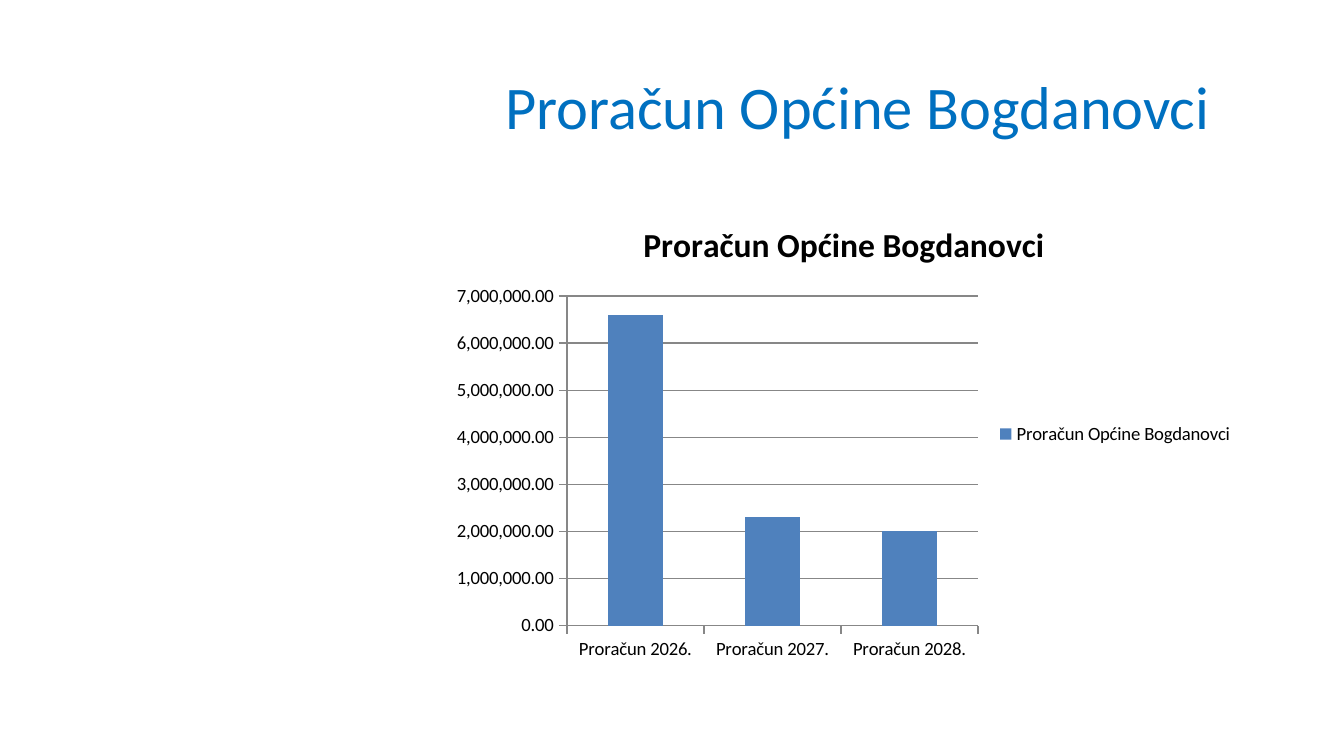
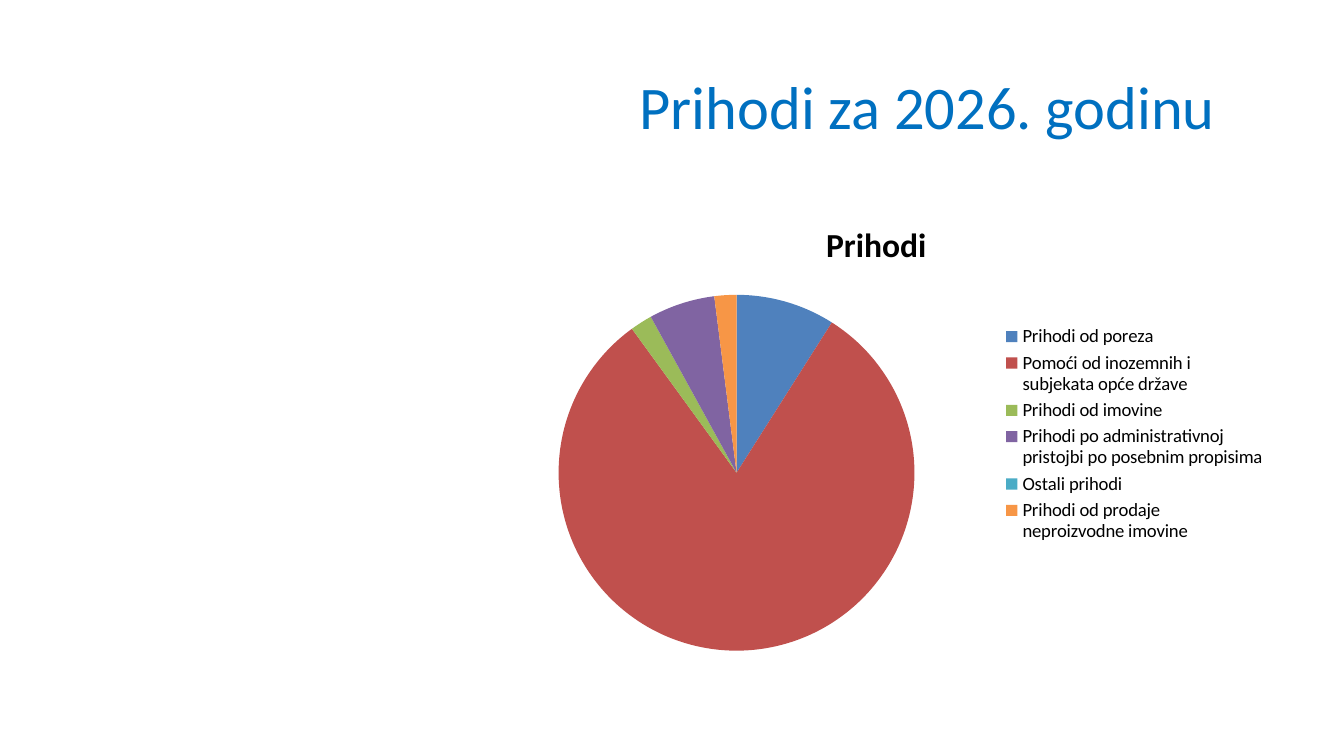
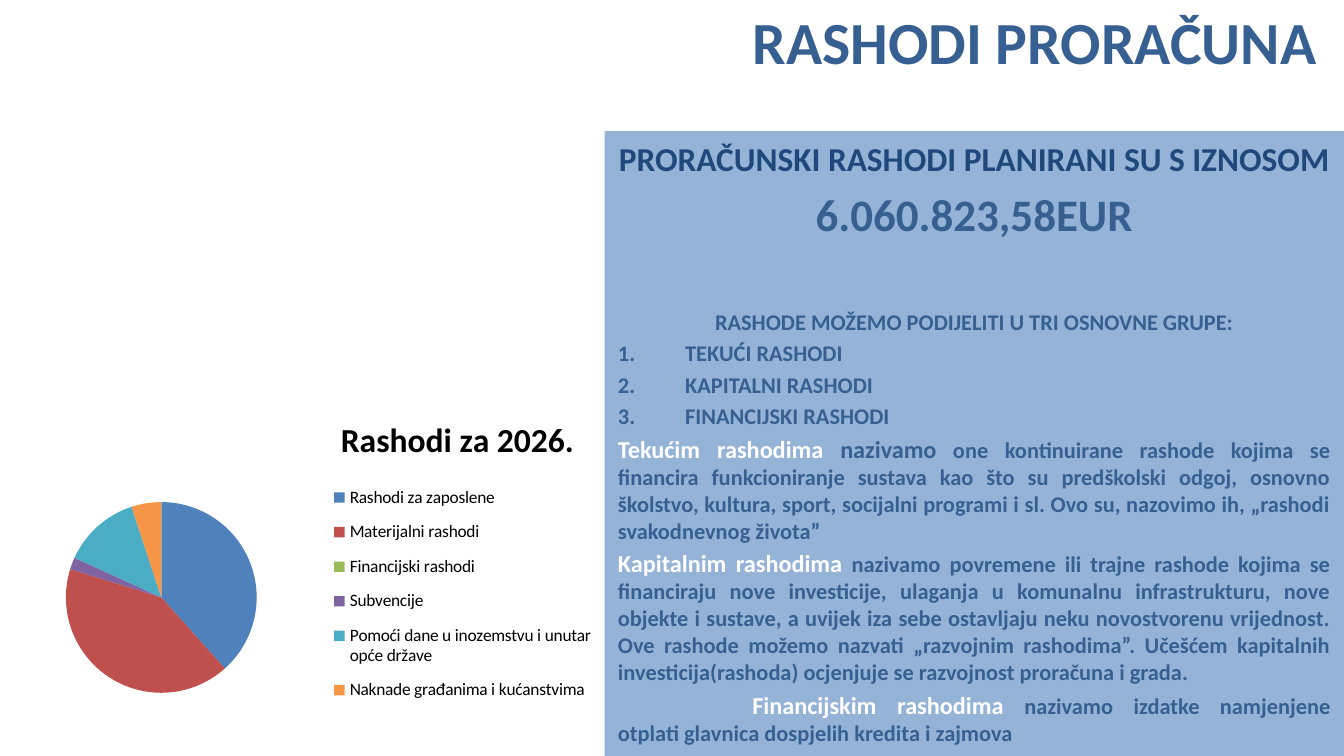
from typing import NamedTuple

from lxml import etree
from pptx import Presentation, util as u
from pptx.chart.data import CategoryChartData
from pptx.dml.color import RGBColor
from pptx.enum import chart as charts, shapes, text
from pptx.oxml.ns import qn

# Shared style
FONT = "Calibri"
BLACK = RGBColor(0x00, 0x00, 0x00)
WHITE = RGBColor(0xFF, 0xFF, 0xFF)
BRIGHT_BLUE = RGBColor(0x00, 0x70, 0xC0)
STEEL = RGBColor(0x37, 0x60, 0x92)
NAVY = RGBColor(0x1F, 0x49, 0x7D)
PANEL_BLUE = RGBColor(0x95, 0xB3, 0xD7)
AXIS_GRAY = RGBColor(0x87, 0x87, 0x87)
SERIES_COLORS = [
    RGBColor(0x4F, 0x81, 0xBD), RGBColor(0xC0, 0x50, 0x4D),
    RGBColor(0x9B, 0xBB, 0x59), RGBColor(0x80, 0x64, 0xA2),
    RGBColor(0x4B, 0xAC, 0xC6), RGBColor(0xF7, 0x96, 0x46),
]

# A 16:9 slide, as a grid of 100 columns and 56.25 rows
SLIDE_WIDTH = u.Inches(10)
SLIDE_HEIGHT = SLIDE_WIDTH * 9 // 16
COLUMN, ROW = SLIDE_WIDTH / 100, SLIDE_HEIGHT / 56.25


class Box(NamedTuple):
    left: float
    top: float
    width: float
    height: float

    def lengths(self):
        return (round(self.left * COLUMN), round(self.top * ROW),
                round(self.width * COLUMN), round(self.height * ROW))


TITLE_BOX = Box(26.6, 4.7, 68.5, 6.3)


def style_font(font, size, color, bold=False):
    font.name, font.size, font.bold = FONT, u.Pt(size), bold
    font.color.rgb = color


def indent(para, left=0, first=0):
    """Set the left and first-line indents, in columns."""
    properties = para._p.get_or_add_pPr()
    properties.set("marL", str(round(left * COLUMN)))
    properties.set("indent", str(round(first * COLUMN)))
    return properties


def add_title_slide(deck, title, box, size, color, bold=False,
                    align=text.PP_ALIGN.LEFT, left_indent=0, right_margin=1):
    page = deck.slides.add_slide(deck.slide_layouts[5])
    holder = page.shapes.title
    holder.left, holder.top, holder.width, holder.height = box.lengths()
    frame = holder.text_frame
    frame.text = title
    frame.word_wrap = True
    frame.auto_size = text.MSO_AUTO_SIZE.NONE
    frame.vertical_anchor = text.MSO_ANCHOR.MIDDLE
    frame.margin_right = round(right_margin * COLUMN)
    para = frame.paragraphs[0]
    para.alignment = align
    indent(para, left_indent)
    style_font(para.font, size, color, bold)
    return page


# Charts
def add_titled_chart(page, box, kind, title, values, number_format="General"):
    data = CategoryChartData(number_format=number_format)
    data.categories = list(values)
    data.add_series(title, list(values.values()))
    chart = page.shapes.add_chart(kind, *box.lengths(), data).chart
    style_font(chart.font, 10, BLACK)
    chart.has_title = True
    chart.chart_title.text_frame.text = title
    style_font(chart.chart_title.text_frame.paragraphs[0].runs[0].font,
               18, BLACK, True)
    chart.has_legend = True
    chart.legend.position = charts.XL_LEGEND_POSITION.RIGHT
    chart.legend.include_in_layout = False
    return chart


def add_column_chart(page, box, title, values):
    chart = add_titled_chart(page, box, charts.XL_CHART_TYPE.COLUMN_CLUSTERED,
                             title, values, "#,##0.00")
    plot = chart.plots[0]
    plot.vary_by_categories = False
    plot.gap_width = 150
    fill = plot.series[0].format.fill
    fill.solid()
    fill.fore_color.rgb = SERIES_COLORS[0]
    chart.value_axis.has_major_gridlines = True
    for axis in (chart.category_axis, chart.value_axis):
        axis.major_tick_mark = charts.XL_TICK_MARK.OUTSIDE
    for ruled in (chart.category_axis, chart.value_axis,
                  chart.value_axis.major_gridlines):
        ruled.format.line.color.rgb = AXIS_GRAY
        ruled.format.line.width = u.Pt(0.75)
    chart.value_axis.tick_labels.number_format = "#,##0.00"
    chart.value_axis.tick_labels.number_format_is_linked = False


def add_pie_chart(page, box, title, values):
    chart = add_titled_chart(page, box, charts.XL_CHART_TYPE.PIE, title, values)
    plot = chart.plots[0]
    plot.vary_by_categories = True
    for index, color in enumerate(SERIES_COLORS):
        fill = plot.series[0].points[index].format.fill
        fill.solid()
        fill.fore_color.rgb = color
    return chart


def set_layout(element, position, inner=False, **shares):
    """Place a chart part by x, y, w and h, as shares of the chart."""
    for old in element.findall(qn("c:layout")):
        element.remove(old)
    layout = etree.Element(qn("c:layout"))
    manual = etree.SubElement(layout, qn("c:manualLayout"))
    settings = {"layoutTarget": "inner"} if inner else {}
    settings.update(xMode="edge", yMode="edge", **shares)
    for name, value in settings.items():
        etree.SubElement(manual, qn(f"c:{name}")).set("val", str(value))
    element.insert(position, layout)


# Expenditure panel
def add_panel(page, box):
    panel = page.shapes.add_shape(shapes.MSO_SHAPE.RECTANGLE, *box.lengths())
    panel.shadow.inherit = False
    panel.fill.solid()
    panel.fill.fore_color.rgb = PANEL_BLUE
    panel.line.fill.background()
    frame = panel.text_frame
    frame.word_wrap = True
    frame.vertical_anchor = text.MSO_ANCHOR.TOP
    center, left = text.PP_ALIGN.CENTER, text.PP_ALIGN.LEFT

    def add_para(size, align, color=STEEL, content="", before=None):
        para = frame.add_paragraph() if frame.text else frame.paragraphs[0]
        if frame.text:
            para.space_before = u.Pt(size * 0.2 if before is None else before)
        para.alignment = align
        if content:
            para.text = content
        style_font(para.font, size, color, True)
        return para

    # Headings
    add_para(17.9, center, NAVY, "PRORAČUNSKI RASHODI PLANIRANI SU S IZNOSOM")
    add_para(24.1, center, content="6.060.823,58EUR")
    add_para(12, center, before=36,
             content="RASHODE MOŽEMO PODIJELITI U TRI OSNOVNE GRUPE:")

    # Numbered groups
    for group in ("TEKUĆI RASHODI", "KAPITALNI RASHODI", "FINANCIJSKI RASHODI"):
        para = add_para(12, left, content=group)
        number = etree.Element(qn("a:buAutoNum"), type="arabicPeriod")
        indent(para, 5, -5).find(qn("a:defRPr")).addprevious(number)

    # Explanations: first-line indent, then spans of size, colour and wording
    explanations = [
        (0, [(13, WHITE, "Tekućim rashodima "),
             (13, STEEL, "nazivamo"),
             (12, STEEL, " one kontinuirane rashode kojima se financira "
              "funkcioniranje sustava kao što su predškolski odgoj, osnovno "
              "školstvo, kultura, sport, socijalni programi i sl. Ovo su, "
              "nazovimo ih, „rashodi svakodnevnog života”")]),
        (0, [(13, WHITE, "Kapitalnim rashodima "),
             (12, STEEL, "nazivamo povremene ili trajne rashode kojima se "
              "financiraju nove investicije, ulaganja u komunalnu "
              "infrastrukturu, nove objekte i sustave, a uvijek iza sebe "
              "ostavljaju neku novostvorenu vrijednost. Ove rashode možemo "
              "nazvati „razvojnim rashodima”. Učešćem kapitalnih "
              "investicija(rashoda) ocjenjuje se razvojnost proračuna i "
              "grada.")]),
        (10, [(13, WHITE, "Financijskim rashodima "),
              (12, STEEL, "nazivamo izdatke namjenjene otplati glavnica "
               "dospjelih kredita i zajmova")]),
    ]
    for first, spans in explanations:
        para = add_para(13, text.PP_ALIGN.JUSTIFY)
        indent(para, 0, first)
        for size, color, words in spans:
            span = para.add_run()
            span.text = words
            style_font(span.font, size, color, True)


# Slides
def build_budget_slide(deck):
    title = "Proračun Općine Bogdanovci"
    page = add_title_slide(deck, title, TITLE_BOX, 32.4, BRIGHT_BLUE,
                           left_indent=10)
    add_column_chart(page, Box(32.8, 14.8, 60, 35), title, {
        "Proračun 2026.": 6600000,
        "Proračun 2027.": 2300000,
        "Proračun 2028.": 2000000,
    })


def build_income_slide(deck):
    page = add_title_slide(deck, "Prihodi za 2026. godinu", TITLE_BOX, 32.4,
                           BRIGHT_BLUE, left_indent=20)
    add_pie_chart(page, Box(35.2, 14.8, 60, 35), "Prihodi", {
        "Prihodi od poreza": 9,
        "Pomoći od inozemnih i subjekata opće države": 81,
        "Prihodi od imovine": 2,
        "Prihodi po administrativnoj pristojbi po posebnim propisima": 6,
        "Ostali prihodi": 0,
        "Prihodi od prodaje neproizvodne imovine": 2,
    })


def build_expenditure_slide(deck):
    page = add_title_slide(deck, "RASHODI PRORAČUNA", Box(35, -0.3, 65, 6.7),
                           32, STEEL, bold=True, align=text.PP_ALIGN.RIGHT,
                           right_margin=2)
    add_panel(page, Box(45, 9.75, 55, 46.5))
    chart = add_pie_chart(page, Box(0, 28.9, 45.3, 27.3), "Rashodi za 2026.", {
        "Rashodi za zaposlene": 38,
        "Materijalni rashodi": 41,
        "Financijski rashodi": 0,
        "Subvencije": 2,
        "Pomoći dane u inozemstvu i unutar opće države": 13,
        "Naknade građanima i kućanstvima": 5,
    })
    style_font(chart.legend.font, 9.3, BLACK)
    plot_area = chart._chartSpace.chart.plotArea
    set_layout(plot_area, 0, inner=True, x=0.05, y=0.31, w=0.43, h=0.52)
    set_layout(chart.chart_title._element, 1, x=0.55, y=0.06)
    set_layout(chart.legend._element, 1, x=0.53, y=0.23, w=0.46, h=0.66)


def main():
    deck = Presentation()
    deck.slide_width, deck.slide_height = SLIDE_WIDTH, SLIDE_HEIGHT
    build_budget_slide(deck)
    build_income_slide(deck)
    build_expenditure_slide(deck)
    deck.save("out.pptx")


if __name__ == "__main__":
    main()
